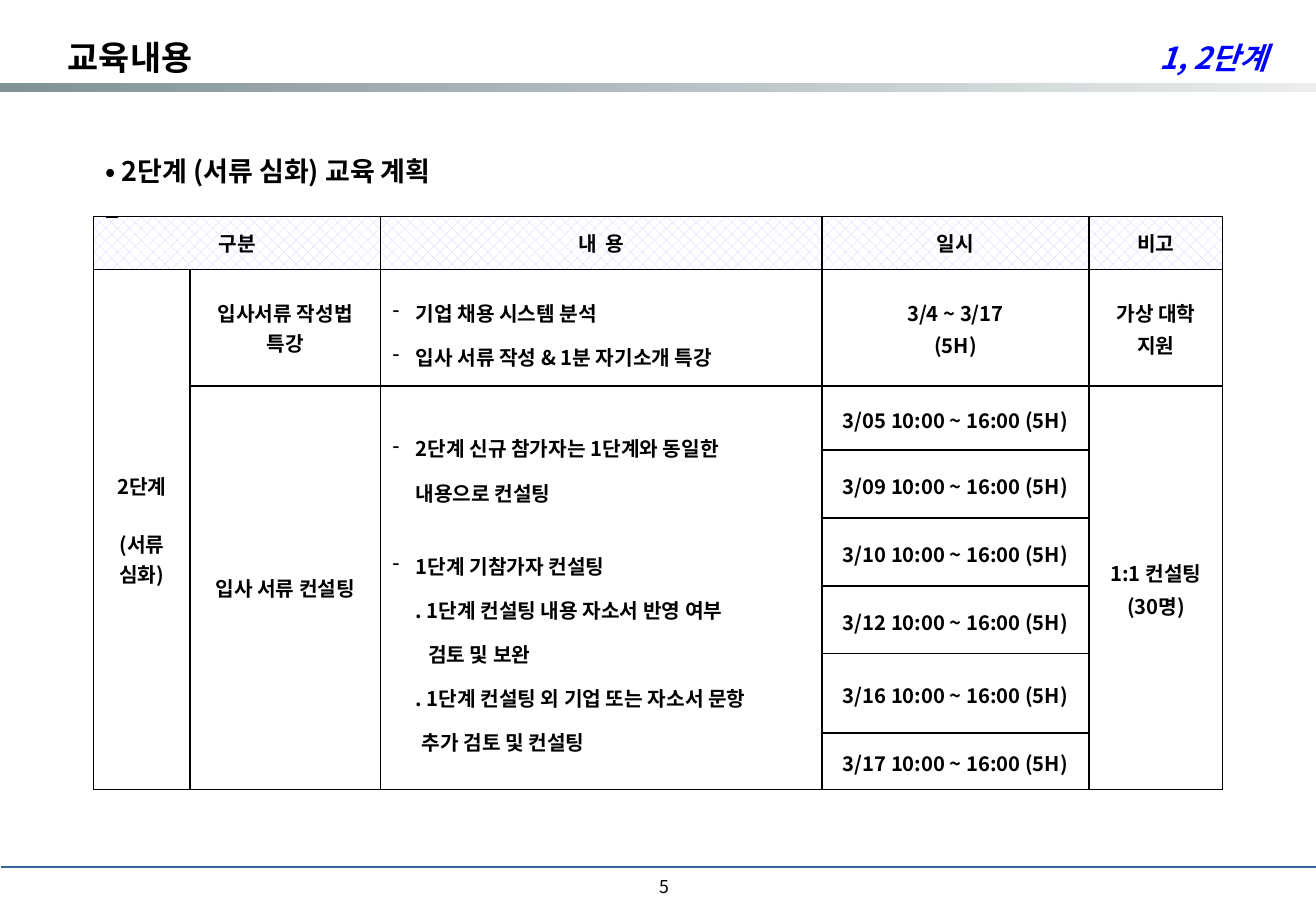
import pptx
import pptx.util
import pptx.dml.color
import pptx.enum.dml
import pptx.enum.shapes
import pptx.enum.text
import lxml.etree
from pptx.util import Cm, Pt

FONT = "Noto Sans CJK KR"
COLORS = {
    "text": "000000", "stage": "0000FF", "paper": "FFFFFF", "hatch": "CCCCFF",
    "bar_start": "819295", "bar_end": "EBEDEE", "footer": "336699",
}
ALIGN = pptx.enum.text.PP_ALIGN
MIDDLE = pptx.enum.text.MSO_ANCHOR.MIDDLE
TOP = pptx.enum.text.MSO_ANCHOR.TOP

# text, left, top, width, height, size, align, anchor, color, bold, italic
LABELS = [
    ("교육내용", 1.17, 0.6, 14.53, 1.19, 20, ALIGN.LEFT, MIDDLE, "text", True, False),
    ("1, 2단계", 17.75, 0.6, 9, 1.19, 18, ALIGN.RIGHT, MIDDLE, "stage", True, True),
    ("• 2단계 (서류 심화) 교육 계획", 1.96, 3.1, 9.5, 1.6, 16, ALIGN.LEFT, TOP, "text", True, False),
    ("5", 7.8, 18.03, 6.43, 1.02, 10.5, ALIGN.RIGHT, MIDDLE, "text", False, False),
]
LINES = [(0.03, 18.13, 27.51, "footer", 0.75), (2.21, 4.55, 2.46, "text", 0.5)]

COLUMNS = [2.01, 3.99, 9.22, 5.59, 2.79]
ROWS = [1.1, 2.44, 1.34, 1.42, 1.42, 1.42, 1.66, 1.18]
HEADERS = {0: "구분", 2: "내  용", 3: "일시", 4: "비고"}
MERGES = [(0, 0, 0, 1), (1, 0, 7, 0), (2, 1, 7, 1), (2, 2, 7, 2), (2, 4, 7, 4)]
DAYS = ["3/05", "3/09", "3/10", "3/12", "3/16", "3/17"]
CENTERED = {
    (1, 1): (["입사서류 작성법 특강"], 1),
    (2, 1): (["입사 서류 컨설팅"], 1),
    (1, 3): (["3/4 ~ 3/17", "(5H)"], 1.1),
    (1, 4): (["가상 대학 지원"], 1.1),
    (2, 4): (["1:1 컨설팅", "(30명)"], 1.1),
}
STAGE = ["2단계", "(서류 심화)"]
# text, bullet, extra indent in cm, space before in points
DETAILS = {
    1: [
        ("기업 채용 시스템 분석", True, 0, 0),
        ("입사 서류 작성 & 1분 자기소개 특강", True, 0, 0),
    ],
    2: [
        ("2단계 신규 참가자는 1단계와 동일한", True, 0, 0),
        ("내용으로 컨설팅", False, 0, 0),
        ("1단계 기참가자 컨설팅", True, 0, 17.5),
        (". 1단계 컨설팅 내용 자소서 반영 여부", False, 0, 0),
        ("검토 및 보완", False, 0.26, 0),
        (". 1단계 컨설팅 외 기업 또는 자소서 문항", False, 0, 0),
        ("추가 검토 및 컨설팅", False, 0.13, 0),
    ],
}
HANGING = 0.48


def rgb(name):
    return pptx.dml.color.RGBColor.from_string(COLORS[name])


def add_child(parent, tag, **attributes):
    return lxml.etree.SubElement(parent, pptx.oxml.ns.qn(tag), attributes)


def write(paragraph, text, size=12, color="text", bold=True, italic=False):
    run = paragraph.add_run()
    run.text = text
    run.font.size, run.font.bold, run.font.italic = Pt(size), bold, italic
    run.font.color.rgb = rgb(color)
    run.font.name = FONT
    add_child(run._r.get_or_add_rPr(), "a:ea", typeface=FONT)


def next_paragraph(frame):
    first = frame.paragraphs[0]
    return frame.add_paragraph() if first.runs else first


def write_centered(cell, texts, spacing=1, gap=0):
    for index, text in enumerate(texts):
        paragraph = next_paragraph(cell.text_frame)
        paragraph.alignment = ALIGN.CENTER
        paragraph.line_spacing = spacing
        paragraph.space_before = Pt(gap if index else 0)
        write(paragraph, text)


def write_details(cell, details):
    for text, bullet, extra, gap in details:
        paragraph = next_paragraph(cell.text_frame)
        paragraph.line_spacing = 1.5
        paragraph.space_before = Pt(gap)
        properties = paragraph._p.get_or_add_pPr()
        properties.set("marL", str(Cm(HANGING + extra)))
        properties.set("indent", str(-Cm(HANGING) if bullet else 0))
        if bullet:
            add_child(properties, "a:buChar", char="-")
        write(paragraph, text)


def style_cell(cell, header):
    cell.vertical_anchor = MIDDLE
    cell.margin_left = cell.margin_right = Cm(0.25)
    cell.margin_top = cell.margin_bottom = Cm(0.1)
    properties = cell._tc.get_or_add_tcPr()
    for side in ("a:lnL", "a:lnR", "a:lnT", "a:lnB"):
        border = add_child(properties, side, w=str(Pt(1)))
        add_child(add_child(border, "a:solidFill"), "a:srgbClr", val=COLORS["text"])
    if header:
        cell.fill.patterned()
        cell.fill.pattern = pptx.enum.dml.MSO_PATTERN.PERCENT_30
        cell.fill.fore_color.rgb = rgb("hatch")
        cell.fill.back_color.rgb = rgb("paper")
    else:
        cell.fill.solid()
        cell.fill.fore_color.rgb = rgb("paper")


def add_bar(slide):
    bar = slide.shapes.add_shape(
        pptx.enum.shapes.MSO_SHAPE.RECTANGLE, Cm(0), Cm(1.73), Cm(27.51), Cm(0.2))
    bar.shadow.inherit = False
    bar.line.fill.background()
    bar.fill.gradient()
    bar.fill.gradient_angle = 0
    for stop, name in zip(bar.fill.gradient_stops, ("bar_start", "bar_end")):
        stop.color.rgb = rgb(name)


def add_line(slide, left, top, right, color, width):
    line = slide.shapes.add_connector(
        pptx.enum.shapes.MSO_CONNECTOR.STRAIGHT, Cm(left), Cm(top), Cm(right), Cm(top))
    line.line.color.rgb = rgb(color)
    line.line.width = Pt(width)
    add_child(line._element.spPr, "a:effectLst")


def add_label(slide, text, left, top, width, height, size, align, anchor, color, bold, italic):
    box = slide.shapes.add_textbox(Cm(left), Cm(top), Cm(width), Cm(height))
    frame = box.text_frame
    frame.word_wrap = True
    frame.vertical_anchor = anchor
    frame.paragraphs[0].alignment = align
    write(frame.paragraphs[0], text, size, color, bold, italic)


def add_plan(slide):
    table = slide.shapes.add_table(
        len(ROWS), len(COLUMNS), Cm(1.96), Cm(4.53), Cm(sum(COLUMNS)), Cm(sum(ROWS))).table
    table.first_row = table.horz_banding = False
    for column, width in zip(table.columns, COLUMNS):
        column.width = Cm(width)
    for index, height in enumerate(ROWS):
        table.rows[index].height = Cm(height)
        for cell in table.rows[index].cells:
            style_cell(cell, header=index == 0)
    for top, left, bottom, right in MERGES:
        table.cell(top, left).merge(table.cell(bottom, right))
    for column, text in HEADERS.items():
        write_centered(table.cell(0, column), [text])
    write_centered(table.cell(1, 0), STAGE, gap=17.5)
    for (row, column), (texts, spacing) in CENTERED.items():
        write_centered(table.cell(row, column), texts, spacing)
    for row, day in enumerate(DAYS, start=2):
        write_centered(table.cell(row, 3), [f"{day} 10:00 ~ 16:00 (5H)"], 1.1)
    for row, details in DETAILS.items():
        write_details(table.cell(row, 2), details)


def main():
    """Build the slide with the stage 2 training plan."""
    presentation = pptx.Presentation()
    presentation.slide_width, presentation.slide_height = Cm(27.51), Cm(19.05)
    slide = presentation.slides.add_slide(presentation.slide_layouts[6])
    add_bar(slide)
    add_plan(slide)
    for line in LINES:
        add_line(slide, *line)
    for label in LABELS:
        add_label(slide, *label)
    presentation.save("out.pptx")


if __name__ == "__main__":
    main()
